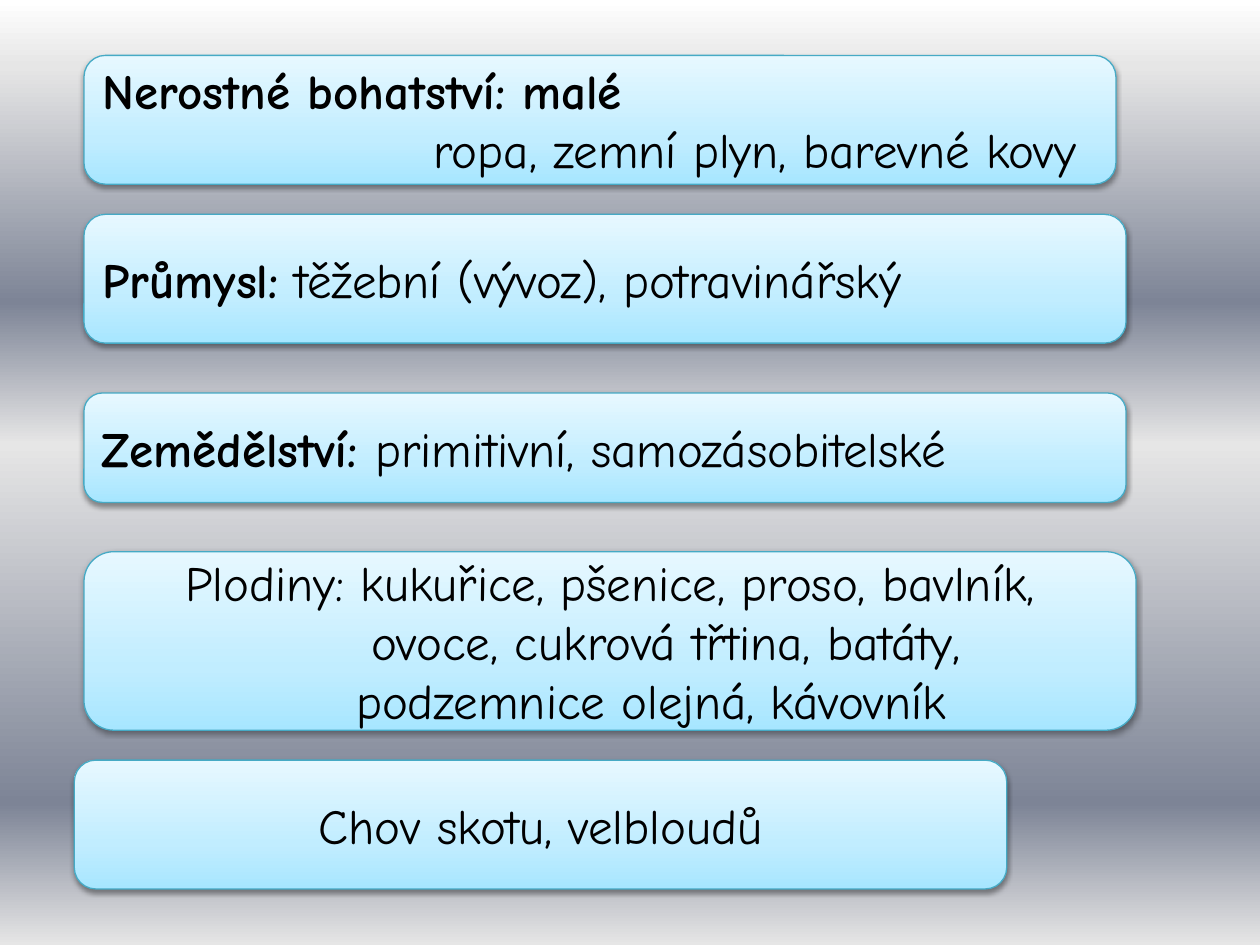
import copy
from dataclasses import dataclass

import pptx
import pptx.dml.color
import pptx.enum.shapes
import pptx.enum.text
import pptx.oxml
import pptx.util

Pt = pptx.util.Pt
ALIGN = pptx.enum.text.PP_ALIGN


@dataclass(frozen=True)
class Theme:
    font: str = "Comic Neue"
    size: float = 28
    text: str = "000000"
    outline: str = "46AAC5"
    outline_width: float = 0.75
    # Gradient stops: (position in percent, colour)
    panel: tuple = ((0, "A7E6FF"), (35, "C1EDFF"), (100, "E7F8FF"))
    background: tuple = ((0, "FFFFFF"), (7, "E6E6E6"), (32, "7D8496"),
                         (47, "E6E6E6"), (85, "7D8496"), (100, "E6E6E6"))


THEME = Theme()

SHADOW = (
    '<a:outerShdw xmlns:a="http://schemas.openxmlformats.org/drawingml/2006/main"'
    ' blurRad="{blur}" dist="{distance}" dir="5400000" rotWithShape="0">'
    '<a:srgbClr val="000000"><a:alpha val="38000"/></a:srgbClr></a:outerShdw>'
)


def rgb(value):
    return pptx.dml.color.RGBColor.from_string(value)


def apply_gradient(fill, owner, stops, angle):
    """Fill with any number of stops; angle runs counter-clockwise."""
    fill.gradient()
    fill.gradient_angle = angle
    stop_list = owner.xpath(".//a:gsLst")[0]
    model = copy.deepcopy(stop_list[0])
    for old_stop in list(stop_list):
        stop_list.remove(old_stop)
    for _ in stops:
        stop_list.append(copy.deepcopy(model))
    for stop, (position, color) in zip(fill.gradient_stops, stops):
        stop.position = position / 100
        stop.color.rgb = rgb(color)


def add_text(paragraph, text, bold=False, size=THEME.size, color=THEME.text):
    run = paragraph.add_run()
    run.text = text
    run.font.name = THEME.font
    run.font.size = Pt(size)
    run.font.bold = bold
    run.font.color.rgb = rgb(color)


def add_line(paragraph, text, heading="", align=ALIGN.LEFT, indent=0):
    """Write one line: an optional bold heading, then plain text."""
    paragraph.alignment = align
    if indent:
        properties = paragraph._p.get_or_add_pPr()
        properties.set("marL", str(Pt(indent)))
        properties.set("indent", "0")
    if heading:
        add_text(paragraph, heading, bold=True)
    if text:
        add_text(paragraph, text)


def add_panel(slide, left, top, width, height, lines):
    shape = slide.shapes.add_shape(
        pptx.enum.shapes.MSO_SHAPE.ROUNDED_RECTANGLE,
        Pt(left), Pt(top), Pt(width), Pt(height))
    properties = shape.element.spPr
    apply_gradient(shape.fill, properties, THEME.panel, 90)
    shape.line.color.rgb = rgb(THEME.outline)
    shape.line.width = Pt(THEME.outline_width)

    # Soft shadow below the panel
    shape.shadow.inherit = False
    shadow = SHADOW.format(blur=Pt(3.1), distance=Pt(1.6))
    properties.xpath("./a:effectLst")[0].append(pptx.oxml.parse_xml(shadow))

    frame = shape.text_frame
    frame.word_wrap = True
    frame.vertical_anchor = pptx.enum.text.MSO_ANCHOR.MIDDLE
    for index, line in enumerate(lines):
        paragraph = frame.add_paragraph() if index else frame.paragraphs[0]
        add_line(paragraph, **line)


def main():
    presentation = pptx.Presentation()
    presentation.slide_width = Pt(720)
    presentation.slide_height = Pt(540)
    slide = presentation.slides.add_slide(presentation.slide_layouts[6])
    apply_gradient(slide.background.fill, slide.element, THEME.background, 270)

    # Mineral resources
    add_panel(slide, 48, 31.7, 589.7, 73.6, [
        dict(text="", heading="Nerostné bohatství: malé"),
        dict(text="ropa, zemní plyn, barevné kovy", align=ALIGN.CENTER, indent=177),
    ])
    # Industry
    add_panel(slide, 48, 122.5, 595.5, 73.6, [
        dict(text=" těžební (vývoz), potravinářský", heading="Průmysl:"),
    ])
    # Agriculture
    add_panel(slide, 48, 224.6, 595.5, 62.5, [
        dict(text="primitivní, samozásobitelské", heading="Zemědělství: "),
    ])
    # Crops
    add_panel(slide, 48, 315.3, 601.2, 102, [
        dict(text="Plodiny: kukuřice, pšenice, proso, bavlník,", align=ALIGN.CENTER),
        dict(text="ovoce, cukrová třtina, batáty,", align=ALIGN.CENTER, indent=64),
        dict(text="podzemnice olejná, kávovník", align=ALIGN.CENTER, indent=47),
    ])
    # Livestock
    add_panel(slide, 42.5, 434.4, 532.8, 73.6, [
        dict(text="Chov skotu, velbloudů", align=ALIGN.CENTER),
    ])

    presentation.save("out.pptx")


if __name__ == "__main__":
    main()
